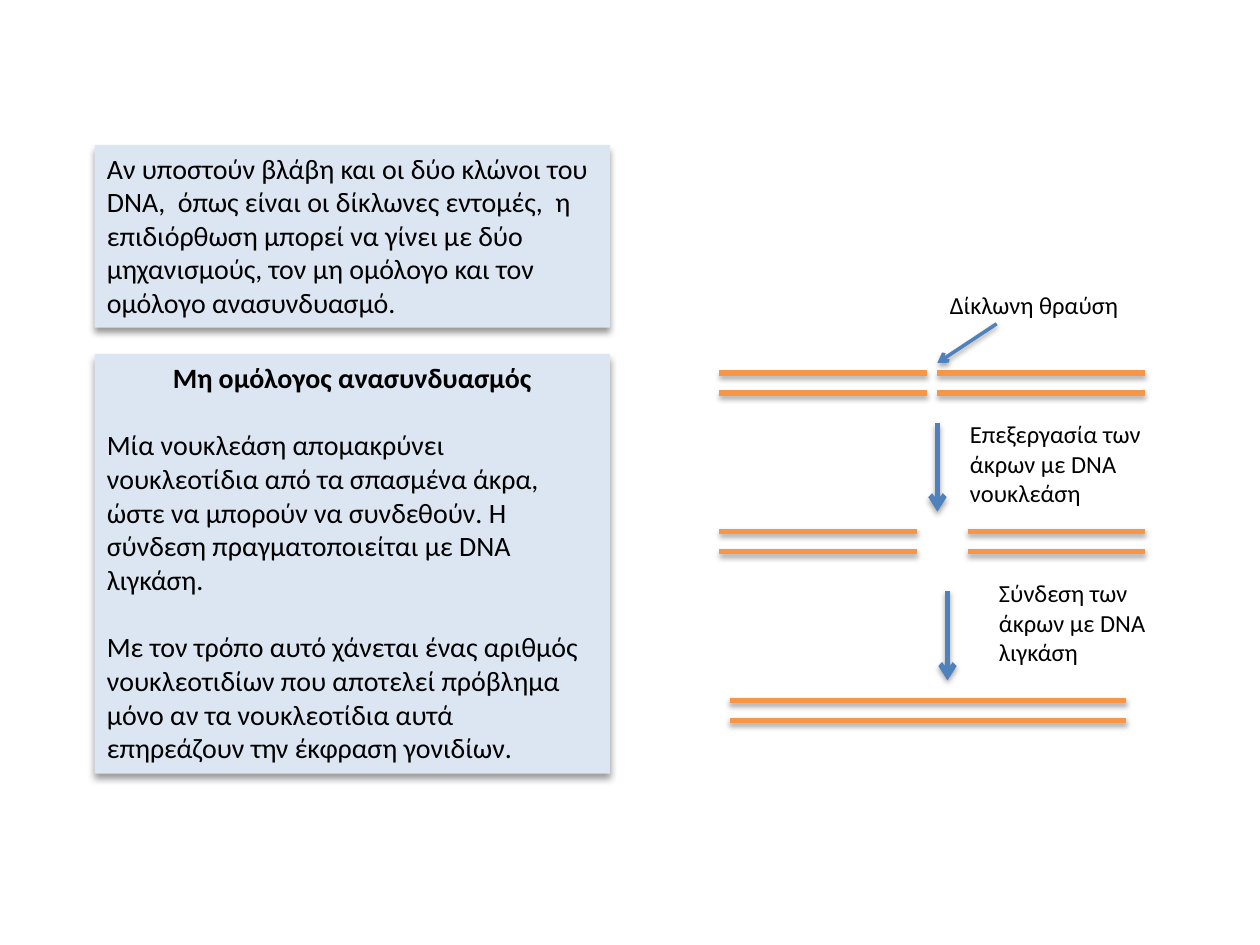
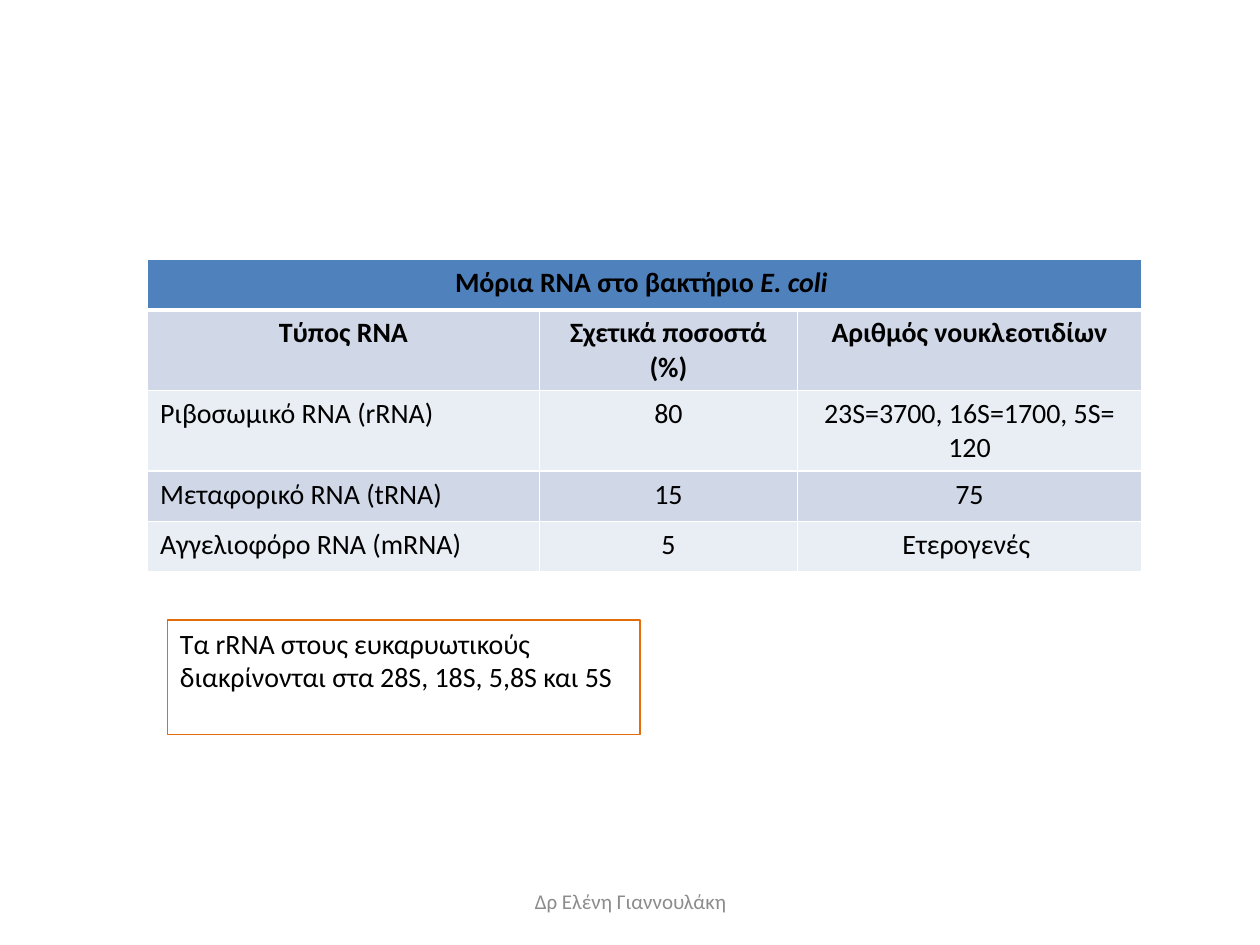
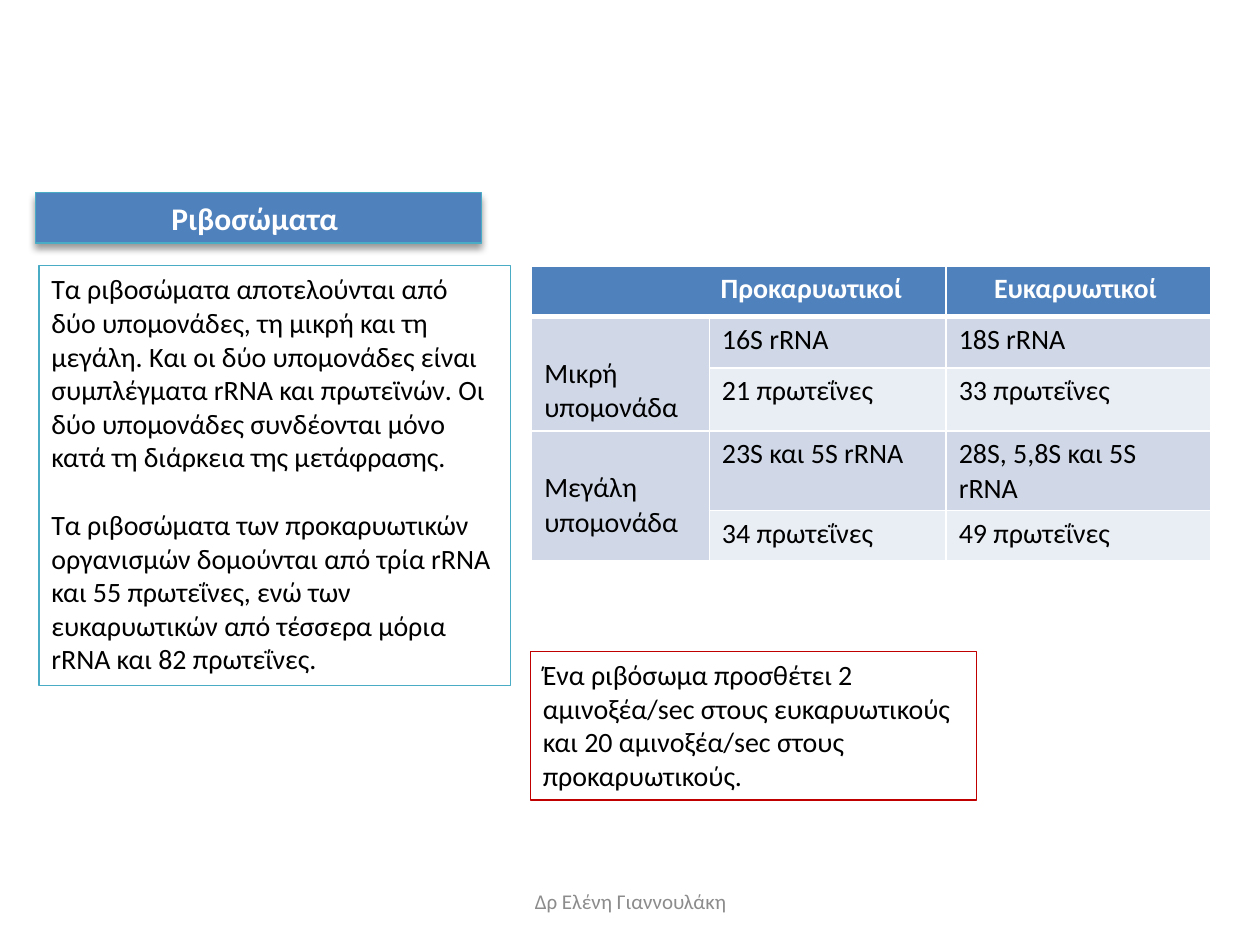
from dataclasses import dataclass

from lxml.etree import SubElement
from pptx import Presentation
from pptx.dml.color import RGBColor
from pptx.enum.shapes import MSO_CONNECTOR
from pptx.enum.text import MSO_ANCHOR, PP_ALIGN
from pptx.oxml.ns import qn
from pptx.util import Inches, Pt


@dataclass(frozen=True)
class Theme:
    """Colours, font and type sizes shared by the slides."""
    font: str = "Calibri"
    title: int = 18
    body: int = 16
    label: int = 14
    footer: int = 12
    blank_line: float = 19.5
    black: str = "000000"
    white: str = "FFFFFF"
    grey: str = "8C8C8C"
    blue: str = "4F81BD"
    pale_blue: str = "DCE6F2"
    band_dark: str = "D0D8E8"
    band_light: str = "E9EDF4"
    strand: str = "F79646"
    orange: str = "E46C0A"
    teal: str = "4BACC6"
    red: str = "C00000"


THEME = Theme()
TITLE_ONLY, BLANK = 5, 6
STRAND_GAP = 0.16


def rgb(color):
    """Turn a hex string into a colour."""
    return RGBColor.from_string(color)


def inches(box):
    """Convert a tuple of numbers to lengths."""
    return [Inches(value) for value in box]


def style_paragraph(paragraph, size=THEME.body, color=THEME.black, bold=False,
                    align=PP_ALIGN.LEFT):
    """Set the font and alignment of a paragraph."""
    paragraph.alignment = align
    font = paragraph.font
    font.name, font.size, font.bold = THEME.font, Pt(size), bold
    font.color.rgb = rgb(color)


def add_shadow(properties, opacity, blur, distance):
    """Give a shape's properties a soft shadow that falls downwards."""
    effects = properties.find(qn("a:effectLst"))
    if effects is None:
        effects = SubElement(properties, qn("a:effectLst"))
    shadow = SubElement(effects, qn("a:outerShdw"), blurRad=str(Pt(blur)),
                        dist=str(Pt(distance)), dir="5400000", rotWithShape="0")
    color = SubElement(shadow, qn("a:srgbClr"), val=THEME.black)
    SubElement(color, qn("a:alpha"), val=str(opacity * 1000))


def decorate(shape, fill=None, line=None):
    """Apply a shadowed fill and a thin outline when they are given."""
    if line:
        shape.line.color.rgb = rgb(line)
        shape.line.width = Pt(0.75)
    if fill:
        shape.fill.solid()
        shape.fill.fore_color.rgb = rgb(fill)
        shape.shadow.inherit = False
        add_shadow(shape._element.spPr, 40, 4, 3)


def add_text(shapes, box, paragraphs, fill=None, line=None, heading=False, **style):
    """Add a text box whose paragraphs stand one blank line apart."""
    shape = shapes.add_textbox(*inches(box))
    decorate(shape, fill, line)
    frame = shape.text_frame
    frame.word_wrap = True
    for index, text in enumerate(paragraphs):
        paragraph = frame.add_paragraph() if index else frame.paragraphs[0]
        paragraph.text = text
        style_paragraph(paragraph, **style)
        if index:
            paragraph.space_before = Pt(THEME.blank_line)
    if heading:
        style_paragraph(frame.paragraphs[0], bold=True, align=PP_ALIGN.CENTER)
    return shape


def add_line(shapes, start, end, color, width=3, arrow=False):
    """Add a shadowed straight line, with an arrowhead if asked."""
    connector = shapes.add_connector(MSO_CONNECTOR.STRAIGHT, *inches(start + end))
    connector.line.color.rgb = rgb(color)
    connector.line.width = Pt(width)
    if arrow:
        SubElement(connector.line._ln, qn("a:tailEnd"), type="arrow")
    add_shadow(connector._element.spPr, 35, 3.1, 1.8)


def add_footer(slide):
    """Add the author's name at the foot of the slide."""
    shape = add_text(slide.shapes, (3.42, 6.95, 3.17, 0.4), ["Δρ Ελένη Γιαννουλάκη"],
                     size=THEME.footer, color=THEME.grey, align=PP_ALIGN.CENTER)
    shape.text_frame.vertical_anchor = MSO_ANCHOR.MIDDLE


def set_borders(cell, row):
    """Draw white cell borders, thicker under the header row."""
    properties = cell._tc.get_or_add_tcPr()
    widths = {"lnL": 1, "lnR": 1, "lnT": 3 if row == 1 else 1, "lnB": 1 if row else 3}
    for index, (side, width) in enumerate(widths.items()):
        border = SubElement(properties, qn(f"a:{side}"), w=str(Pt(width)))
        fill = SubElement(border, qn("a:solidFill"))
        SubElement(fill, qn("a:srgbClr"), val=THEME.white)
        properties.insert(index, border)


def add_banded_table(slide, origin, widths, heights, rows):
    """Add a table with a blue header and alternating bands."""
    box = (*origin, sum(widths), sum(heights))
    table = slide.shapes.add_table(len(rows), len(widths), *inches(box)).table
    table.first_row = table.horz_banding = False
    for column, width in zip(table.columns, widths):
        column.width = Inches(width)
    for row, (height, texts) in enumerate(zip(heights, rows)):
        table.rows[row].height = Inches(height)
        band = THEME.band_dark if row % 2 else THEME.band_light
        for column, text in enumerate(texts):
            cell = table.cell(row, column)
            cell.text = text
            cell.fill.solid()
            cell.fill.fore_color.rgb = rgb(band if row else THEME.blue)
            set_borders(cell, row)
            style_paragraph(cell.text_frame.paragraphs[0])
    return table


def add_repair_diagram(slide, left, top):
    """Draw the break, trimming and joining of a double strand."""
    shapes = slide.shapes.add_group_shape().shapes
    stages = [(0.71, [(0, 1.65), (1.73, 3.38)]),
              (1.97, [(0, 1.57), (1.97, 3.38)]),
              (3.31, [(0.08, 3.23)])]
    for stage_top, segments in stages:
        for y in (top + stage_top, top + stage_top + STRAND_GAP):
            for start, end in segments:
                add_line(shapes, (left + start, y), (left + end, y), THEME.strand)
    arrows = [((1.73, 1.11), (1.73, 1.81), 3),
              ((1.81, 2.44), (1.81, 3.15), 3),
              ((2.2, 0.32), (1.73, 0.63), 2)]
    for (x1, y1), (x2, y2), width in arrows:
        add_line(shapes, (left + x1, top + y1), (left + x2, top + y2),
                 THEME.blue, width, arrow=True)
    labels = [(1.73, 0, 1.57, 0.34, "Δίκλωνη θραύση"),
              (1.89, 1.03, 1.57, 0.81, "Επεξεργασία των άκρων με DNA νουκλεάση"),
              (2.12, 2.29, 1.42, 0.81, "Σύνδεση των άκρων με DNA λιγκάση")]
    for x, y, width, height, text in labels:
        add_text(shapes, (left + x, top + y, width, height), [text], size=THEME.label)


def build_recombination_slide(presentation):
    """Build the slide on non-homologous recombination."""
    slide = presentation.slides.add_slide(presentation.slide_layouts[BLANK])
    add_text(slide.shapes, (0.75, 1.15, 4.09, 1.45), [
        "Αν υποστούν βλάβη και οι δύο κλώνοι του DNA,  όπως είναι οι δίκλωνες εντομές,  "
        "η επιδιόρθωση μπορεί να γίνει με δύο μηχανισμούς, τον μη ομόλογο και τον "
        "ομόλογο ανασυνδυασμό."], fill=THEME.pale_blue)
    add_text(slide.shapes, (0.75, 2.81, 4.09, 3.33), [
        "Μη ομόλογος ανασυνδυασμός",
        "Μία νουκλεάση απομακρύνει νουκλεοτίδια από τα σπασμένα άκρα, ώστε να μπορούν "
        "να συνδεθούν. Η σύνδεση πραγματοποιείται με DNA λιγκάση.",
        "Με τον τρόπο αυτό χάνεται ένας αριθμός νουκλεοτιδίων που αποτελεί πρόβλημα "
        "μόνο αν τα νουκλεοτίδια αυτά επηρεάζουν την έκφραση γονιδίων."],
        fill=THEME.pale_blue, heading=True)
    add_repair_diagram(slide, 5.71, 2.25)


def add_rna_table(slide, left, top):
    """Add the table of RNA types in E. coli."""
    table = add_banded_table(
        slide, (left, top), [3.11, 2.05, 2.73], [0.4, 0.64, 0.64, 0.4, 0.4],
        [["Μόρια RNA στο βακτήριο ", "", ""],
         ["Τύπος RNA", "Σχετικά ποσοστά (%)", "Αριθμός νουκλεοτιδίων"],
         ["Ριβοσωμικό RNA (rRNA)", "80", "23S=3700, 16S=1700, 5S= 120"],
         ["Μεταφορικό RNA (tRNA)", "15", "75"],
         ["Αγγελιοφόρο RNA (mRNA)", "5", "Ετερογενές "]])
    for row in range(5):
        for column in range(3):
            if row < 2 or column:
                paragraph = table.cell(row, column).text_frame.paragraphs[0]
                style_paragraph(paragraph, bold=row < 2, align=PP_ALIGN.CENTER)
    header = table.cell(0, 0)
    species = header.text_frame.paragraphs[0].add_run()
    species.text = "E. coli "
    species.font.italic = True
    header.merge(table.cell(0, 2))


def build_rna_slide(presentation):
    """Build the slide on RNA molecules."""
    slide = presentation.slides.add_slide(presentation.slide_layouts[BLANK])
    add_footer(slide)
    add_rna_table(slide, 1.17, 2.06)
    add_text(slide.shapes, (1.33, 4.92, 3.75, 0.91), [
        "Τα rRNA στους ευκαρυωτικούς διακρίνονται στα 28S, 18S, 5,8S και 5S"],
        line=THEME.orange)


def add_subunit_table(slide, left, top):
    """Add the table comparing ribosome subunits."""
    table = add_banded_table(
        slide, (left, top), [1.41, 1.88, 2.1], [0.4, 0.41, 0.5, 0.63, 0.4],
        [["Προκαρυωτικοί", "", "Ευκαρυωτικοί "],
         ["Μικρή υπομονάδα", "16S rRNA", "18S rRNA"],
         ["", "21 πρωτεΐνες", "33 πρωτεΐνες"],
         ["Μεγάλη υπομονάδα", "23S και 5S rRNA", "28S, 5,8S και 5S rRNA"],
         ["", "34 πρωτεΐνες", "49 πρωτεΐνες"]])
    for column, align in ((0, PP_ALIGN.LEFT), (2, PP_ALIGN.CENTER)):
        style_paragraph(table.cell(0, column).text_frame.paragraphs[0],
                        color=THEME.white, bold=True, align=align)
    table.cell(0, 0).margin_left = Inches(1.5)
    table.cell(0, 0).merge(table.cell(0, 1))
    for row in (1, 3):
        subunit = table.cell(row, 0)
        subunit.margin_top = Inches(0.32)
        subunit.merge(table.cell(row + 1, 0))
        table.cell(row + 1, 0).fill.fore_color.rgb = rgb(THEME.band_dark)


def add_title(slide, box, text):
    """Turn the title placeholder into a blue banner."""
    title = slide.shapes.title
    title.left, title.top, title.width, title.height = inches(box)
    title.text = text
    style_paragraph(title.text_frame.paragraphs[0], size=THEME.title,
                    color=THEME.white, bold=True, align=PP_ALIGN.CENTER)
    decorate(title, THEME.blue, THEME.teal)


def build_ribosome_slide(presentation):
    """Build the slide on ribosomes."""
    slide = presentation.slides.add_slide(presentation.slide_layouts[TITLE_ONLY])
    add_footer(slide)
    add_title(slide, (0.28, 1.53, 3.54, 0.4), "Ριβοσώματα ")
    add_text(slide.shapes, (0.31, 2.11, 3.74, 3.33), [
        "Τα ριβοσώματα αποτελούνται από δύο υπομονάδες, τη μικρή και τη μεγάλη. Και οι "
        "δύο υπομονάδες είναι συμπλέγματα rRNA και πρωτεϊνών. Οι δύο υπομονάδες "
        "συνδέονται μόνο κατά τη διάρκεια της μετάφρασης.",
        "Τα ριβοσώματα των προκαρυωτικών οργανισμών δομούνται από τρία rRNA και 55 "
        "πρωτεΐνες, ενώ των ευκαρυωτικών από τέσσερα μόρια rRNA και 82 πρωτεΐνες."],
        line=THEME.teal)
    add_subunit_table(slide, 4.22, 2.11)
    add_text(slide.shapes, (4.21, 5.17, 3.54, 1.18), [
        "Ένα ριβόσωμα προσθέτει 2 αμινοξέα/sec στους ευκαρυωτικούς και 20 "
        "αμινοξέα/sec στους προκαρυωτικούς."], line=THEME.red)


def main():
    """Build and save the presentation."""
    presentation = Presentation()
    presentation.slide_width, presentation.slide_height = Inches(10), Inches(7.5)
    build_recombination_slide(presentation)
    build_rna_slide(presentation)
    build_ribosome_slide(presentation)
    presentation.save("out.pptx")


if __name__ == "__main__":
    main()
